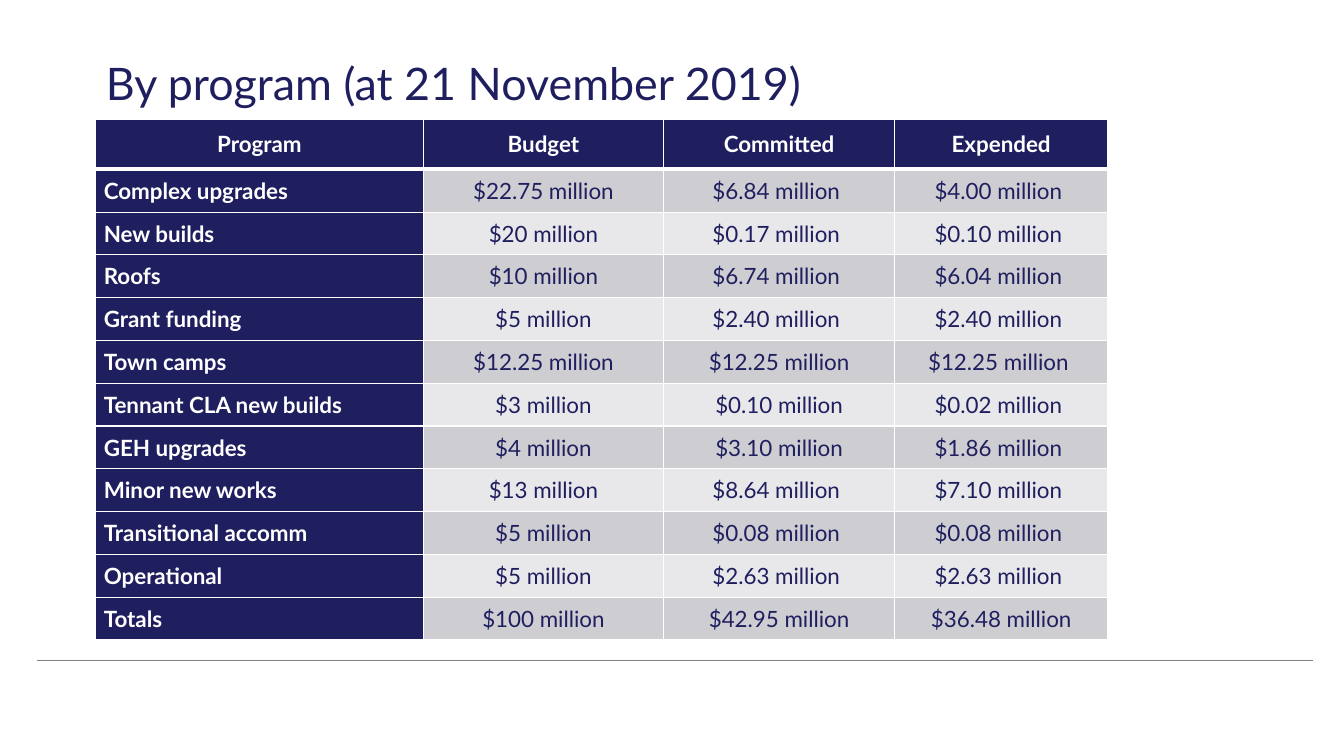
from lxml import etree
from pptx import Presentation
from pptx import util as u
from pptx.dml.color import RGBColor
from pptx.enum import shapes, text
from pptx.oxml import ns

NAVY, WHITE, GREY = "1F1F5F", "FFFFFF", "808080"
BANDS = ("CDCDD2", "E8E8EA")
COLUMN_WIDTHS = (3.25, 2.39, 2.29, 2.12)
HEADER_HEIGHT = 0.5
ROWS = [
    ("Program", "Budget", "Committed", "Expended"),
    ("Complex upgrades", "$22.75 million", "$6.84 million ", "$4.00 million "),
    ("New builds", "$20 million", "$0.17 million ", "$0.10 million "),
    ("Roofs", "$10 million", "$6.74 million ", "$6.04 million "),
    ("Grant funding", "$5 million", "$2.40 million ", "$2.40 million "),
    ("Town camps", "$12.25 million", "$12.25 million", "$12.25 million "),
    ("Tennant CLA new builds", "$3 million", "$0.10 million", "$0.02 million "),
    ("GEH upgrades", "$4 million", "$3.10 million", "$1.86 million "),
    ("Minor new works", "$13 million", "$8.64 million ", "$7.10 million "),
    ("Transitional accomm", "$5 million", "$0.08 million ", "$0.08 million "),
    ("Operational", "$5 million", "$2.63 million ", "$2.63 million "),
    ("Totals", "$100 million", "$42.95 million", "$36.48 million"),
]


def rgb(value):
    """Return the colour for a hex string."""
    return RGBColor.from_string(value)


def style_run(r, size, color, bold=False):
    """Set the typeface, size, colour and weight of a run."""
    r.font.name = "Lato"
    r.font.size = u.Pt(size)
    r.font.color.rgb = rgb(color)
    r.font.bold = bold


def add_title(s, title, x, y, w, h):
    """Place the slide title in the given box."""
    sp = s.shapes.title
    sp.left, sp.top, sp.width, sp.height = map(u.Inches, (x, y, w, h))
    tf = sp.text_frame
    tf.text = title
    tf.word_wrap = True
    tf.vertical_anchor = text.MSO_ANCHOR.MIDDLE
    p = tf.paragraphs[0]
    p.alignment = text.PP_ALIGN.LEFT
    p.line_spacing = u.Pt(43.9)
    style_run(p.runs[0], 32, NAVY)


def set_borders(cell, top, bottom):
    """Draw white cell borders with the given top and bottom widths in points."""
    tcPr = cell._tc.get_or_add_tcPr()
    for side, width in (("L", 1), ("R", 1), ("T", top), ("B", bottom)):
        ln = etree.SubElement(tcPr, ns.qn("a:ln" + side), w=str(u.Pt(width)))
        fill = etree.SubElement(ln, ns.qn("a:solidFill"))
        etree.SubElement(fill, ns.qn("a:srgbClr"), val=WHITE)


def fill_cell(cell, value, row, col):
    """Write and format one cell according to its row and column."""
    heading = row == 0 or col == 0
    set_borders(cell, 3 if row == 1 else 1, 3 if row == 0 else 1)
    cell.fill.solid()
    cell.fill.fore_color.rgb = rgb(NAVY if heading else BANDS[(row - 1) % 2])
    cell.margin_left = cell.margin_right = u.Inches(0.08)
    cell.margin_top = cell.margin_bottom = u.Inches(0.07)
    cell.vertical_anchor = text.MSO_ANCHOR.MIDDLE
    cell.text_frame.text = value
    p = cell.text_frame.paragraphs[0]
    left = col == 0 and row > 0
    p.alignment = text.PP_ALIGN.LEFT if left else text.PP_ALIGN.CENTER
    p.space_after = u.Pt(6)
    style_run(p.runs[0], 16, WHITE if heading else NAVY, heading)


def add_program_table(s, x, y, w, h):
    """Place the program spending table in the given box."""
    frame = s.shapes.add_table(len(ROWS), len(COLUMN_WIDTHS), *map(u.Inches, (x, y, w, h)))
    table = frame.table
    for column, width in zip(table.columns, COLUMN_WIDTHS):
        column.width = u.Inches(width * w / sum(COLUMN_WIDTHS))
    body_height = (h - HEADER_HEIGHT) / (len(ROWS) - 1)
    for i, values in enumerate(ROWS):
        table.rows[i].height = u.Inches(body_height if i else HEADER_HEIGHT)
        for j, value in enumerate(values):
            fill_cell(table.cell(i, j), value, i, j)


def add_footer_rule(s, x, y, w):
    """Draw the grey line above the footer."""
    rule = s.shapes.add_connector(
        shapes.MSO_CONNECTOR.STRAIGHT, *map(u.Inches, (x, y, x + w, y)))
    rule.line.color.rgb = rgb(GREY)
    rule.line.width = u.Pt(1)
    etree.SubElement(rule._element.spPr, ns.qn("a:effectLst"))


def main():
    """Build and save the presentation."""
    prs = Presentation()
    prs.slide_width, prs.slide_height = u.Inches(13.33), u.Inches(7.5)
    s = prs.slides.add_slide(prs.slide_layouts[5])
    add_footer_rule(s, 0.37, 6.55, 12.65)
    add_title(s, "By program (at 21 November 2019)", 0.95, 0.39, 11.49, 0.79)
    add_program_table(s, 0.95, 1.18, 10.04, 5.17)
    prs.save("out.pptx")


if __name__ == "__main__":
    main()
